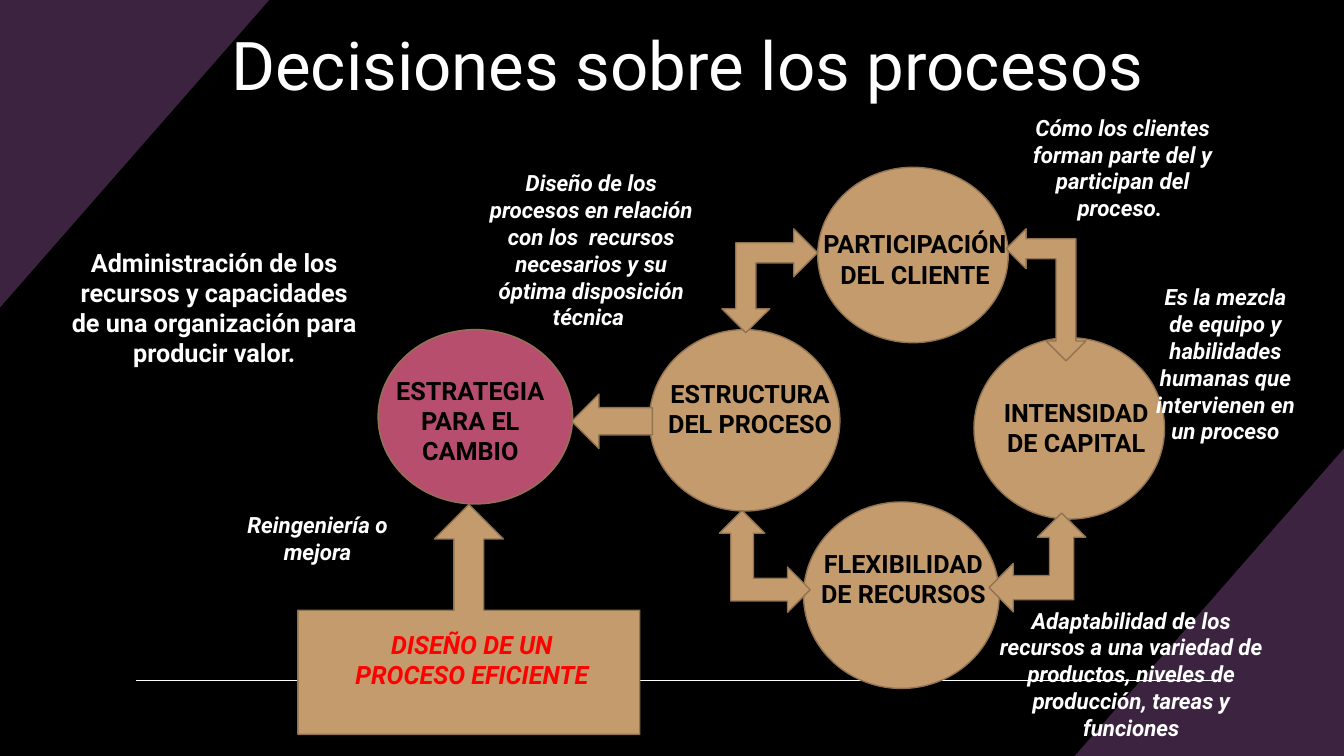
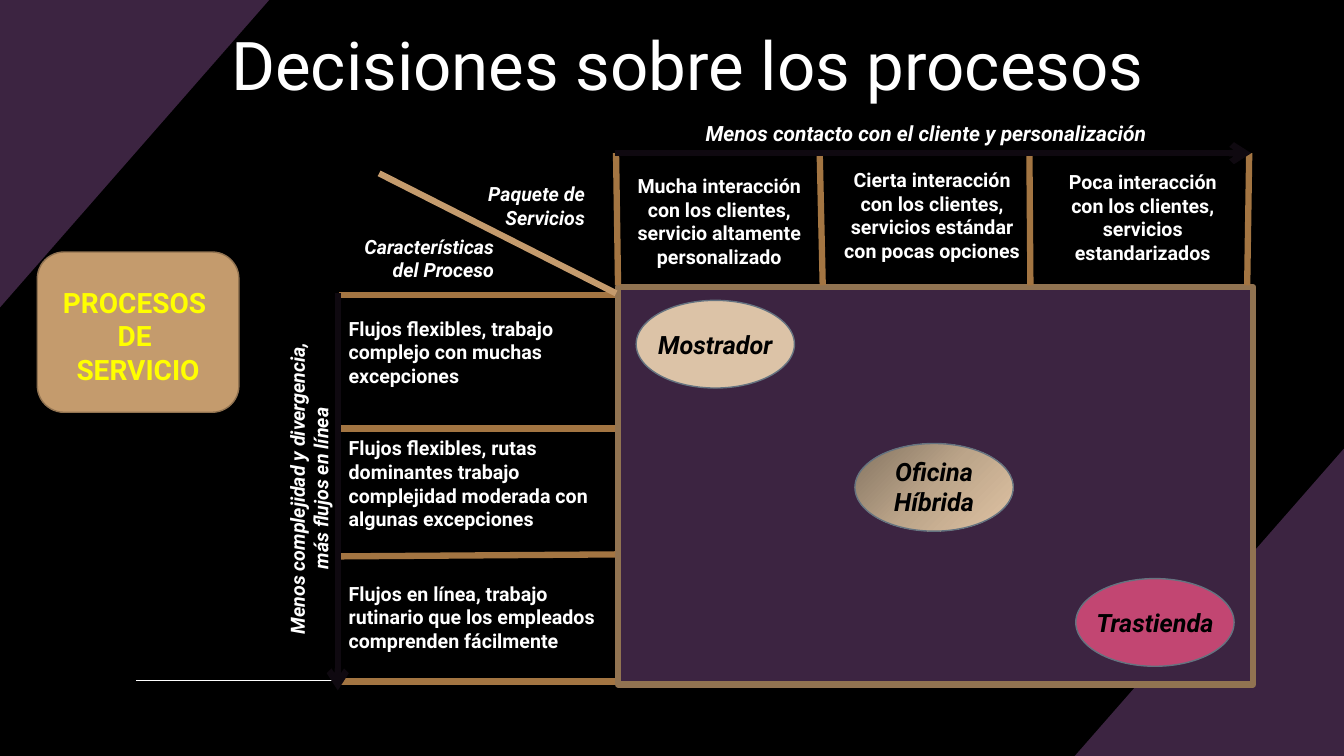
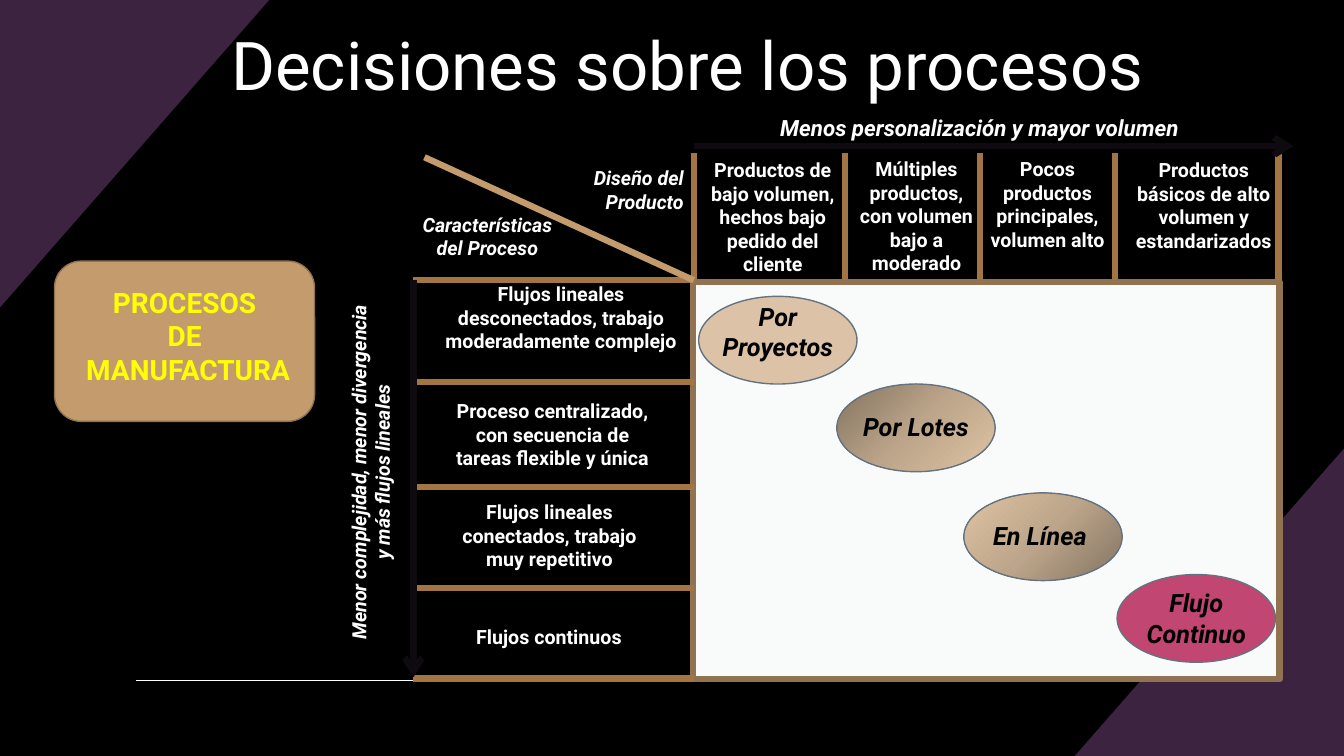
from copy import deepcopy

from lxml.etree import SubElement
from pptx import Presentation
from pptx.dml.color import RGBColor
from pptx.enum.shapes import MSO_CONNECTOR, MSO_SHAPE
from pptx.enum.text import MSO_ANCHOR, MSO_AUTO_SIZE, PP_ALIGN
from pptx.oxml.ns import qn
from pptx.util import Pt

SCALE = 9144
FONT = "Roboto"
WHITE, BLACK, RED, YELLOW = "FFFFFF", "000000", "FF0000", "FFFF00"
PLUM, SAND, EARTH, BRONZE = "3C2441", "C49B6D", "917351", "A37542"
ROSE, PINK, CREAM, SLATE = "B84E6E", "C24672", "DCC3A7", "657380"
INK, PAPER = "0F0910", "F9FAFA"
FADE = ((0, "847461"), (0.5, "BCA58A"), (1, "E0C3A3"))
LEFT, MID, RIGHT = PP_ALIGN.LEFT, PP_ALIGN.CENTER, PP_ALIGN.RIGHT


def emu(*sizes):
    """Turn px lengths into EMU."""
    return [size * SCALE for size in sizes]


def hue(code):
    """Turn a hex string into a colour."""
    return RGBColor.from_string(code)


class Deck:
    """Hold the style and the current slide."""

    def __init__(self):
        """Start an empty deck on a black background."""
        self.prs = Presentation()
        self.prs.slide_width, self.prs.slide_height = emu(1333, 750)
        back = self.prs.slide_master.background.fill
        back.solid()
        back.fore_color.rgb = hue(BLACK)

    def page(self, title):
        """Add a slide with its corners, base line and title."""
        self.slide = self.prs.slides.add_slide(self.prs.slide_layouts[5])
        self.shapes = self.slide.shapes
        self.corner((1333, 445), (1333, 750), (1066, 750))
        self.corner((0, 305), (0, 0), (267, 0))
        self.line((135, 675), (1202, 675), WHITE, 1)
        head = self.shapes.title
        head.left, head.top, head.width, head.height = emu(216, 4, 932, 104)
        frame = head.text_frame
        frame.word_wrap = True
        frame.auto_size = MSO_AUTO_SIZE.NONE
        frame.vertical_anchor = MSO_ANCHOR.BOTTOM
        self.fill(frame, title, 48, WHITE, False, False, MID)

    def corner(self, start, *rest):
        """Draw one plum triangle."""
        pen = self.shapes.build_freeform(*start, scale=SCALE)
        pen.add_line_segments(rest, close=True)
        form = pen.convert_to_shape()
        form.shadow.inherit = False
        form.fill.solid()
        form.fill.fore_color.rgb = hue(PLUM)
        form.line.fill.background()

    def fill(self, frame, words, size, color, bold, ital, align):
        """Write one paragraph per line of words."""
        for num, part in enumerate(words.split("\n")):
            para = frame.add_paragraph() if num else frame.paragraphs[0]
            para.alignment = align
            run = para.add_run()
            run.text = part
            font = run.font
            font.name, font.size = FONT, Pt(size)
            font.bold, font.italic = bold, ital
            font.color.rgb = hue(color)

    def text(self, box, words, size=14, color=WHITE, ital=False, align=MID, turn=0):
        """Add a bold text box."""
        item = self.shapes.add_textbox(*emu(*box))
        item.rotation = turn
        frame = item.text_frame
        frame.word_wrap = True
        frame.auto_size = MSO_AUTO_SIZE.SHAPE_TO_FIT_TEXT
        self.fill(frame, words, size, color, True, ital, align)

    def shape(self, kind, box, color=SAND, edge=EARTH, width=1, turn=0, adj=()):
        """Add a preset shape with a plain fill."""
        item = self.shapes.add_shape(kind, *emu(*box))
        item.shadow.inherit = False
        item.rotation = turn
        for num, value in enumerate(adj):
            item.adjustments[num] = value
        item.fill.solid()
        item.fill.fore_color.rgb = hue(color)
        item.line.color.rgb = hue(edge)
        item.line.width = Pt(width)
        return item

    def fade(self, item, angle):
        """Give a shape the three-stop gradient, angle clockwise."""
        item.fill.gradient()
        item.fill.gradient_angle = 360 - angle
        stops = item._element.spPr.find(".//" + qn("a:gsLst"))
        stops.append(deepcopy(stops[-1]))
        for stop, (place, color) in zip(item.fill.gradient_stops, FADE):
            stop.position = place
            stop.color.rgb = hue(color)

    def oval(self, x, y, words, color=CREAM, drop=8, angle=None):
        """Add a matrix ellipse with its label, drop px below its top."""
        item = self.shape(MSO_SHAPE.OVAL, (x, y, 157, 87), color, SLATE)
        if angle is not None:
            self.fade(item, angle)
        self.text((x, y + drop, 157, 87 - 2 * drop), words, 18, BLACK, True)

    def line(self, start, end, color=BRONZE, width=4.5, arrow=False):
        """Add a straight line, with an arrowhead at its end if asked."""
        item = self.shapes.add_connector(MSO_CONNECTOR.STRAIGHT, *emu(*start, *end))
        item.line.color.rgb = hue(color)
        item.line.width = Pt(width)
        if arrow:
            SubElement(item.line._get_or_add_ln(), qn("a:tailEnd"), type="arrow")
        SubElement(item._element.spPr, qn("a:effectLst"))

    def lines(self, pairs, **style):
        """Add several lines of one style."""
        for start, end in pairs:
            self.line(start, end, **style)

    def texts(self, items, **style):
        """Add several text boxes of one style."""
        for box, words in items:
            self.text(box, words, **style)


def flow(deck):
    """Build the slide of linked decisions."""
    deck.text((59, 240, 307, 162), "Administración de los recursos y capacidades "
              "de una organización para producir valor.", 18)
    nodes = (
        ((811, 166, 189, 174), SAND, (793, 222, 229, 71), "PARTICIPACIÓN DEL CLIENTE"),
        ((797, 498, 194, 185), SAND, (796, 539, 200, 101), "FLEXIBILIDAD DE RECURSOS"),
        ((644, 327, 189, 180), SAND, (644, 370, 200, 101), "ESTRUCTURA DEL PROCESO"),
        ((966, 335, 189, 180), SAND, (981, 389, 173, 71), "INTENSIDAD DE CAPITAL"),
        ((375, 327, 193, 173), ROSE, (375, 367, 183, 101), "ESTRATEGIA PARA EL CAMBIO"),
    )
    for box, color, area, words in nodes:
        deck.shape(MSO_SHAPE.OVAL, box, color)
        deck.text(area, words, 18, BLACK)
    bend = MSO_SHAPE.LEFT_UP_ARROW
    arrows = (
        (bend, (972, 253, 131, 79), 270, ()),
        (bend, (716, 227, 95, 103), 180, (0.21, 0.25, 0.25)),
        (bend, (981, 509, 96, 98), 0, ()),
        (bend, (708, 512, 101, 90), 90, ()),
        (MSO_SHAPE.DOWN_ARROW, (580, 378, 54, 80), 90, ()),
        (MSO_SHAPE.LEFT_ARROW_CALLOUT, (351, 445, 228, 339), 90, (0.13, 0.15, 0.15, 0.54)),
    )
    for kind, box, turn, adj in arrows:
        deck.shape(kind, box, turn=turn, adj=adj)
    deck.text((334, 619, 268, 101), "DISEÑO DE UN PROCESO EFICIENTE", 18, RED, True)
    deck.texts((
        ((1131, 276, 169, 199), "Es la mezcla de equipo y habilidades humanas "
         "que intervienen en un proceso"),
        ((468, 163, 237, 172), "Diseño de los procesos en relación con los  recursos "
         "necesarios y su óptima disposición técnica "),
        ((1010, 108, 207, 145), "Cómo los clientes forman parte del y participan "
         "del proceso. "),
        ((979, 597, 286, 145), "Adaptabilidad de los recursos a una variedad de "
         "productos, niveles de producción, tareas y funciones"),
        ((227, 502, 176, 64), "Reingeniería o mejora"),
    ), size=16, ital=True)


def service(deck):
    """Build the service matrix."""
    deck.shape(MSO_SHAPE.ROUNDED_RECTANGLE, (37, 250, 200, 159))
    deck.text((37, 278, 200, 111), "PROCESOS \nDE \nSERVICIO", 20, YELLOW)
    deck.shape(MSO_SHAPE.RECTANGLE, (613, 285, 630, 394), PLUM, width=4.5)
    deck.oval(631, 298, "Mostrador", drop=24)
    deck.oval(848, 440, "Oficina Híbrida", angle=45)
    deck.oval(1067, 574, "Trastienda", PINK, 24)
    cols = ((613, 611), (816, 813), (1237, 1239), (1022, 1021))
    deck.lines(((low, 283), (high, 152)) for low, high in cols)
    rows = ((293, 293), (425, 425), (552, 550), (676, 676))
    deck.lines(((336, near), (610, far)) for near, far in rows)
    deck.lines((((610, 152), (1241, 152)), ((335, 291), (335, 685))),
               color=INK, arrow=True)
    deck.line((611, 291), (376, 172), SAND)
    deck.texts((
        ((433, 176, 157, 57), "Paquete de Servicios"),
        ((327, 228, 173, 57), "Características del Proceso"),
    ), ital=True, align=RIGHT)
    deck.text((651, 115, 535, 35),
              "Menos contacto con el cliente y personalización", 15, ital=True)
    deck.text((136, 456, 341, 57),
              "Menos complejidad y divergencia, más flujos en línea", ital=True, turn=270)
    deck.texts((
        ((336, 309, 273, 81), "Flujos flexibles, trabajo complejo con muchas excepciones"),
        ((336, 572, 273, 104), "Flujos en línea, trabajo rutinario que los empleados "
         "comprenden fácilmente"),
        ((336, 428, 273, 104), "Flujos flexibles, rutas dominantes trabajo complejidad "
         "moderada con algunas excepciones"),
    ), align=LEFT)
    deck.texts((
        ((612, 168, 203, 104), "Mucha interacción con los clientes, servicio altamente "
         "personalizado"),
        ((819, 162, 211, 128), "Cierta interacción con los clientes, servicios estándar "
         "con pocas opciones"),
        ((1035, 164, 197, 104), "Poca interacción con los clientes, servicios "
         "estandarizados"),
    ))


def plant(deck):
    """Build the manufacturing matrix."""
    deck.shape(MSO_SHAPE.RECTANGLE, (687, 280, 582, 394), PAPER, width=4.5)
    deck.shape(MSO_SHAPE.ROUNDED_RECTANGLE, (54, 259, 258, 159))
    deck.text((62, 278, 249, 111), "PROCESOS \nDE \nMANUFACTURA", 20, YELLOW)
    deck.oval(693, 294, "Por Proyectos", drop=0)
    deck.oval(830, 381, "Por Lotes", drop=22, angle=45)
    deck.oval(956, 489, "En Línea ", drop=22, angle=225)
    deck.oval(1108, 570, "Flujo Continuo", PINK)
    deck.lines(((x, 278), (x, 152)) for x in (688, 838, 972, 1106, 1268))
    deck.lines(((410, y), (688, y)) for y in (278, 379, 483, 583, 673))
    deck.lines((((688, 145), (1283, 145)), ((410, 278), (410, 672))),
               color=INK, arrow=True)
    deck.line((688, 278), (421, 156), SAND)
    deck.text((531, 160, 157, 57), "Diseño del Producto", ital=True, align=RIGHT)
    deck.text((397, 206, 173, 57), "Características del Proceso", ital=True)
    deck.text((704, 108, 535, 37), "Menos personalización y mayor volumen", 16, ital=True)
    deck.text((185, 440, 365, 57),
              "Menor complejidad, menor divergencia y más flujos lineales",
              ital=True, turn=270)
    deck.texts((
        ((431, 275, 251, 104), "Flujos lineales desconectados, trabajo moderadamente "
         "complejo"),
        ((434, 391, 228, 81), "Proceso centralizado, con secuencia de tareas flexible "
         "y única"),
        ((432, 491, 226, 81), "Flujos lineales conectados, trabajo muy repetitivo"),
        ((439, 615, 211, 34), "Flujos continuos"),
        ((688, 152, 157, 128), "Productos de bajo volumen, hechos bajo pedido del cliente"),
        ((838, 151, 142, 128), "Múltiples productos, con volumen bajo a moderado"),
        ((972, 151, 134, 128), "Pocos productos principales, volumen alto"),
        ((1106, 152, 176, 104), "Productos básicos de alto volumen y estandarizados"),
    ))


def main():
    """Build and save the deck."""
    deck = Deck()
    for build in (flow, service, plant):
        deck.page("Decisiones sobre los procesos")
        build(deck)
    deck.prs.save("out.pptx")


if __name__ == "__main__":
    main()
